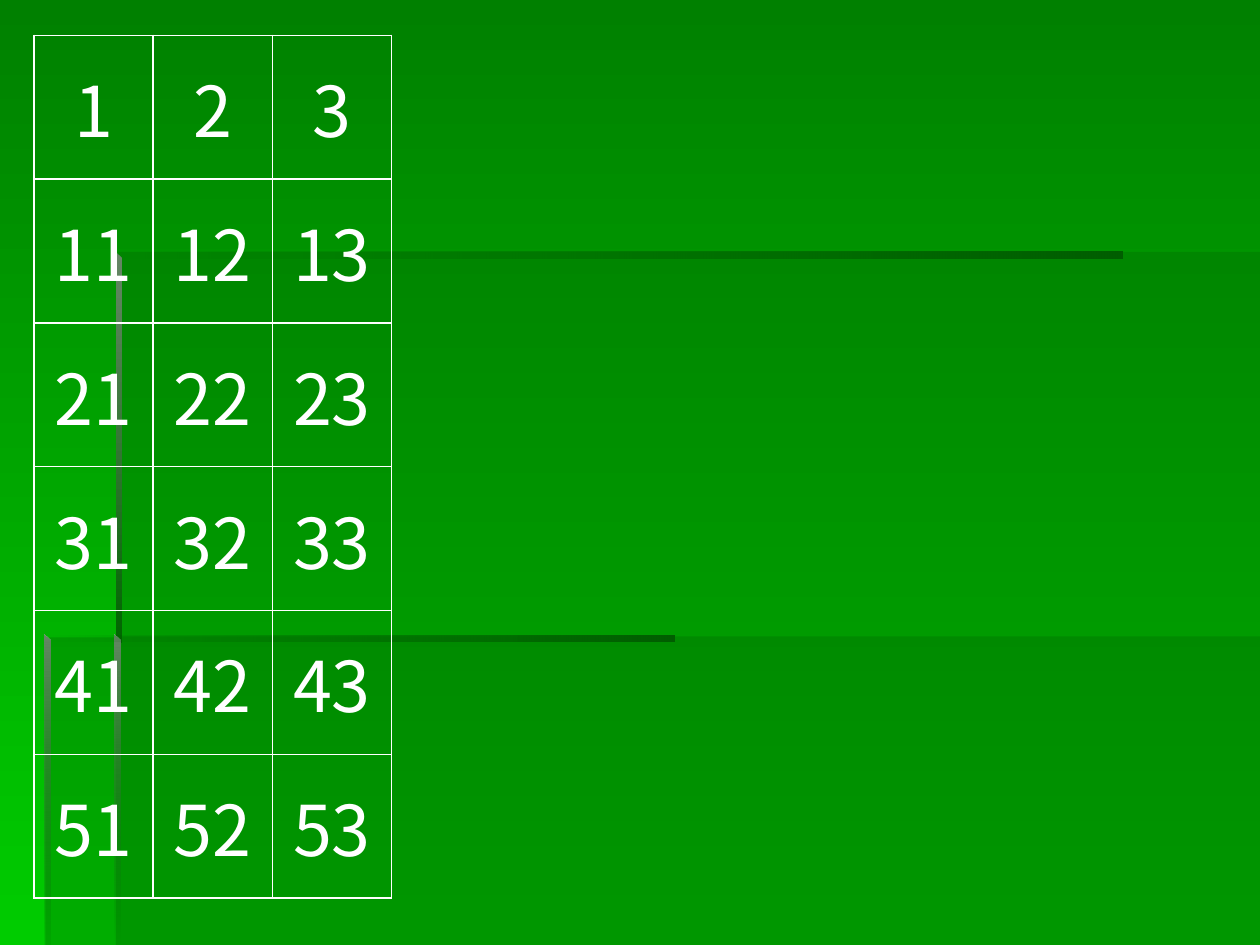
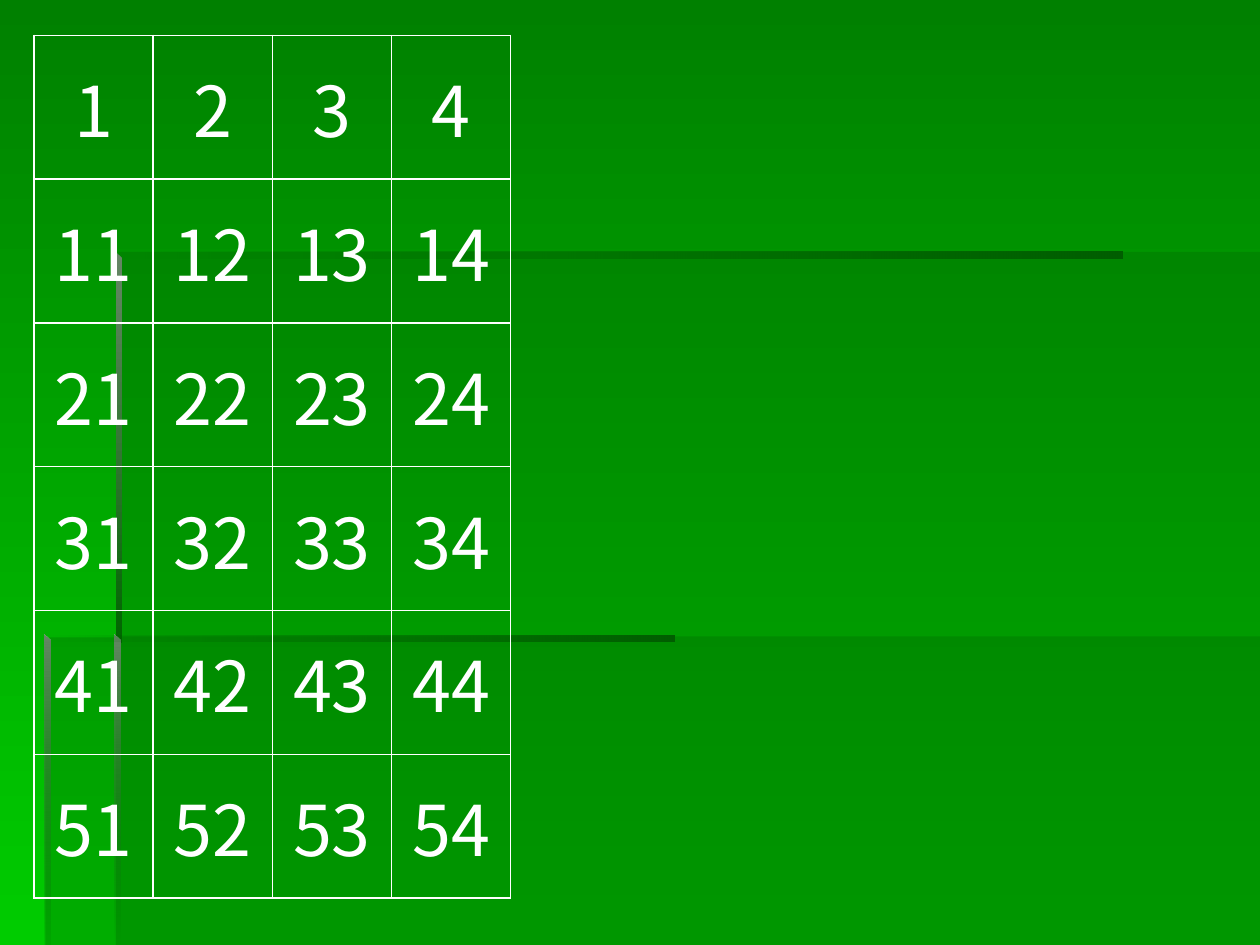
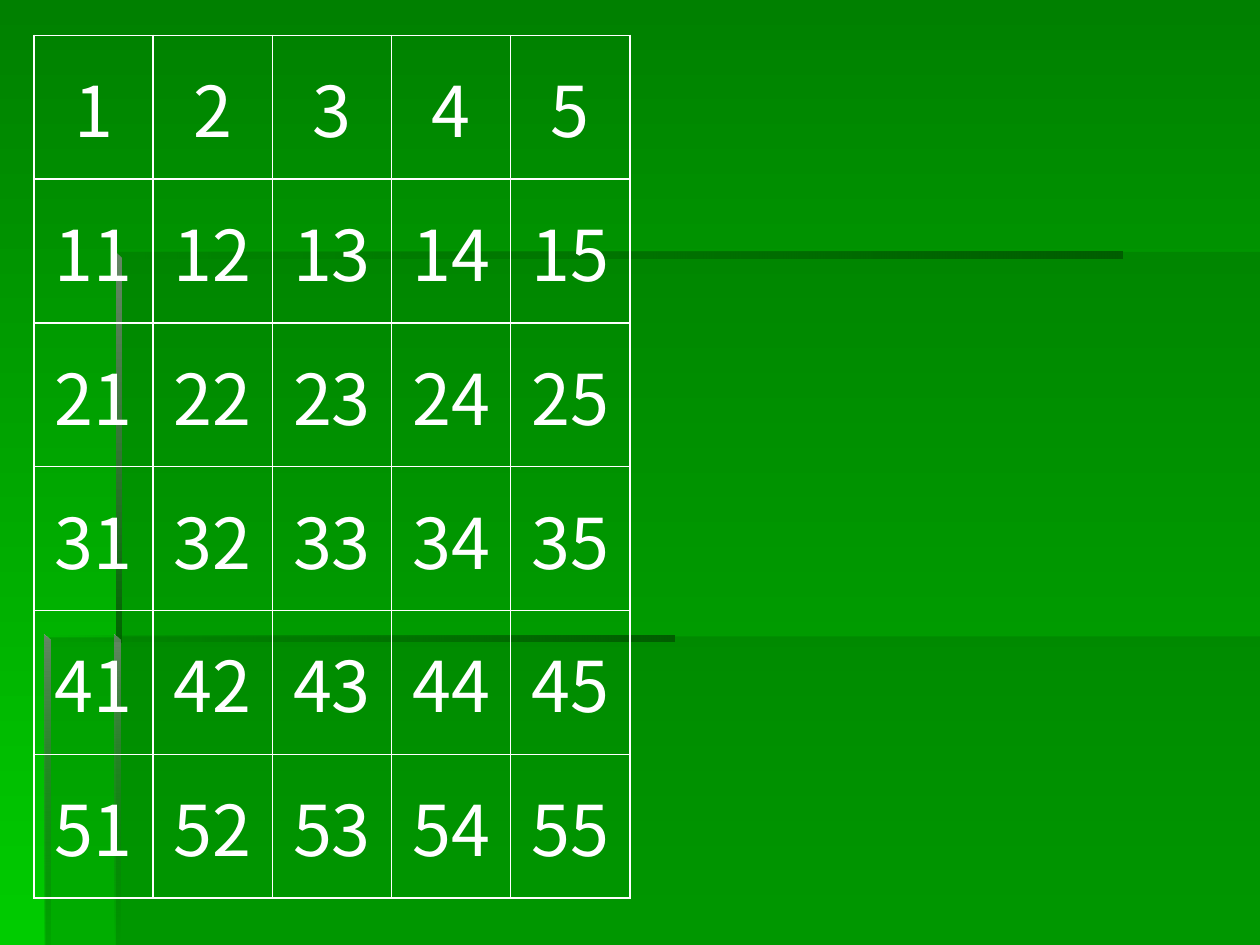
"""Build three slides of number tables, each one column wider than the last."""
from lxml.etree import SubElement
from pptx import Presentation
from pptx.dml.color import RGBColor
from pptx.enum.text import MSO_ANCHOR, PP_ALIGN
from pptx.oxml import parse_xml
from pptx.oxml.ns import nsdecls, qn
from pptx.util import Inches, Pt

ROW_COUNT = 6
COLUMN_COUNTS = (3, 4, 5)
NUMBER_TABLES = [
    [[str(10 * row + column) for column in range(1, count + 1)] for row in range(ROW_COUNT)]
    for count in COLUMN_COUNTS
]

FONT = "Noto Sans CJK JP"
WHITE, DARK, SHADE, GREY = "FFFFFF", "006600", "005E00", "668666"
BACKGROUND = ("008000", "00CC00")
SLIDE_WIDTH, SLIDE_HEIGHT = 10, 7.5
TABLE_LEFT, TABLE_TOP = 0.27, 0.28
CELL_WIDTH, CELL_HEIGHT = 4.73 / 5, 6.85 / ROW_COUNT
ACROSS, DOWN = 0, 270


def box(left, top, right, bottom):
    """Return the corners of a rectangle."""
    return [(left, top), (left, bottom), (right, bottom), (right, top)]


def bevel(left, top, bottom):
    """Return a thin upright edge with a slanted top."""
    return [(left, top), (left, bottom), (left + 0.05, bottom), (left + 0.05, top + 0.05)]


STEP = [(0.94, 5.06), (0.36, 5.06), (0.36, SLIDE_HEIGHT),
        (SLIDE_WIDTH, SLIDE_HEIGHT), (SLIDE_WIDTH, 2), (0.94, 2)]
PANELS = [
    (box(0.92, 5.05, SLIDE_WIDTH, SLIDE_HEIGHT), [DARK], [30], None),
    (STEP, [DARK], [30], None),
    (box(0.92, 2, 8.91, 2.05), [DARK, SHADE], [0, 100], ACROSS),
    (bevel(0.92, 2, 5.1), [GREY, DARK], [100, 100], DOWN),
    (bevel(0.91, 5.04, SLIDE_HEIGHT), [GREY, DARK], [100, 0], DOWN),
    (box(0.35, 5.04, 5.35, 5.09), [DARK, SHADE], [0, 100], ACROSS),
    (bevel(0.35, 5.04, SLIDE_HEIGHT), [GREY, DARK], [100, 10], DOWN),
]


def color(value):
    """Turn a hex string into a colour."""
    return RGBColor.from_string(value)


def paint(fill, colors, angle):
    """Fill with one colour, or with a gradient between two."""
    if len(colors) == 1:
        fill.solid()
        fill.fore_color.rgb = color(colors[0])
        return
    fill.gradient()
    fill.gradient_angle = angle
    for stop, value in zip(fill.gradient_stops, colors):
        stop.color.rgb = color(value)


def add_panel(slide, points, colors, opacities, angle):
    """Draw one translucent outline without line or shadow."""
    corners = [(Inches(x), Inches(y)) for x, y in points]
    builder = slide.shapes.build_freeform(*corners[0])
    builder.add_line_segments(corners[1:], close=True)
    shape = builder.convert_to_shape()
    shape.shadow.inherit = False
    shape.line.fill.background()
    paint(shape.fill, colors, angle)
    for element, opacity in zip(shape.element.spPr.iter(qn("a:srgbClr")), opacities):
        SubElement(element, qn("a:alpha"), val=str(opacity * 1000))
    return shape


def dress_master(master, slide):
    """Give the master the background and the stepped panels."""
    paint(master.background.fill, BACKGROUND, DOWN)
    for index, panel in enumerate(PANELS):
        shape = add_panel(slide, *panel)
        shape.element.nvSpPr.cNvPr.id = 100 + index
        master.shapes.element.append(shape.element)


def format_cell(cell, text):
    """Write a number in a clear cell with white borders."""
    cell.fill.background()
    cell.vertical_anchor = MSO_ANCHOR.MIDDLE
    cell.text_frame.text = text
    paragraph = cell.text_frame.paragraphs[0]
    paragraph.alignment = PP_ALIGN.CENTER
    font = paragraph.runs[0].font
    font.name, font.size, font.color.rgb = FONT, Pt(40), color(WHITE)
    properties = cell._tc.get_or_add_tcPr()
    for index, side in enumerate("LRTB"):
        properties.insert(index, parse_xml(
            f'<a:ln{side} {nsdecls("a")} w="{Pt(1)}"><a:solidFill>'
            f'<a:srgbClr val="{WHITE}"/></a:solidFill></a:ln{side}>'))


def add_number_table(slide, numbers):
    """Place a table of numbers with equal cells."""
    columns = len(numbers[0])
    table = slide.shapes.add_table(
        ROW_COUNT, columns, Inches(TABLE_LEFT), Inches(TABLE_TOP),
        Inches(CELL_WIDTH * columns), Inches(CELL_HEIGHT * ROW_COUNT)).table
    table.first_row = table.horz_banding = False
    for row, texts in enumerate(numbers):
        for column, text in enumerate(texts):
            format_cell(table.cell(row, column), text)


def main():
    """Build and save the presentation."""
    presentation = Presentation()
    presentation.slide_width = Inches(SLIDE_WIDTH)
    presentation.slide_height = Inches(SLIDE_HEIGHT)
    blank = presentation.slide_layouts[6]
    slides = [presentation.slides.add_slide(blank) for _ in NUMBER_TABLES]
    dress_master(presentation.slide_master, slides[0])
    for slide, numbers in zip(slides, NUMBER_TABLES):
        add_number_table(slide, numbers)
    presentation.save("out.pptx")


if __name__ == "__main__":
    main()
